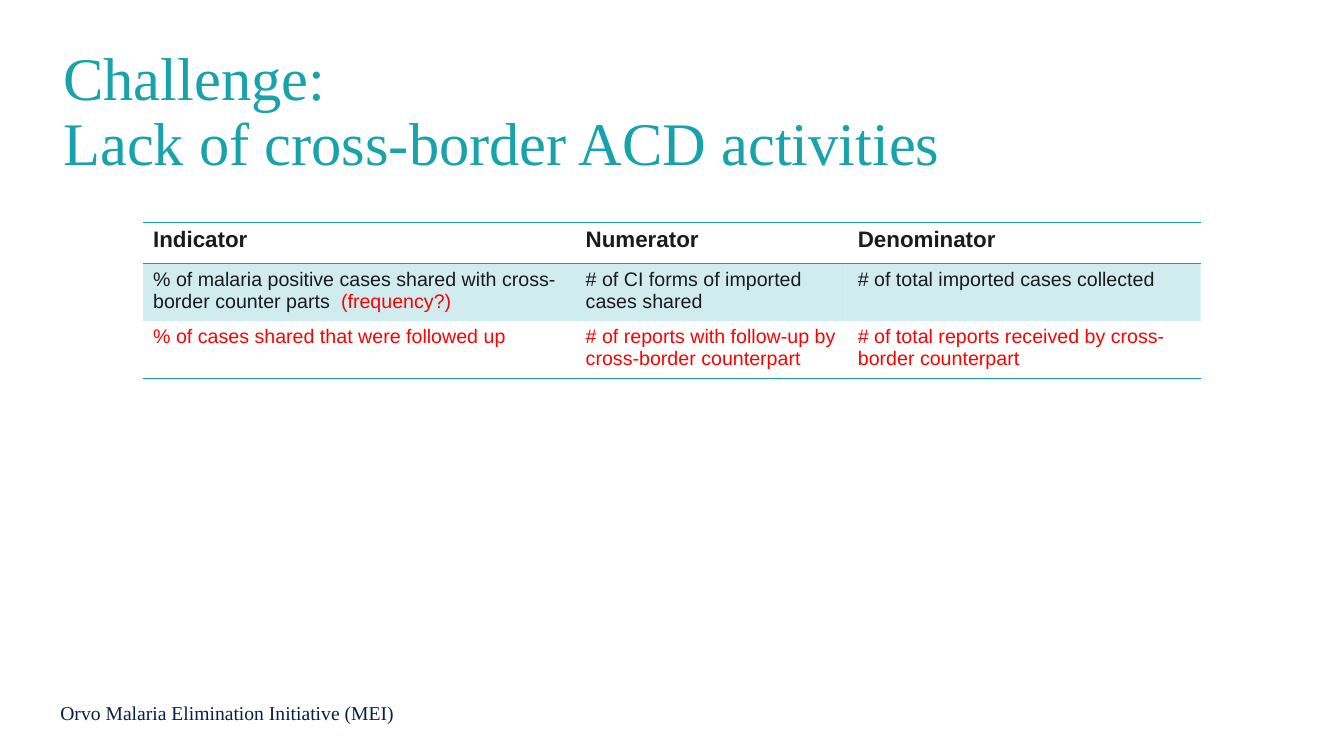
from pptx import Presentation
from pptx.dml.color import RGBColor
from pptx.enum import text
from pptx.oxml.ns import qn
from pptx.util import Pt
from lxml import etree

TEAL = RGBColor(0x18, 0xA3, 0xAC)
NAVY = RGBColor(0x05, 0x20, 0x49)
INK = RGBColor(0x1B, 0x1B, 0x1B)
RED = RGBColor(0xFF, 0x00, 0x00)
SERIF, SANS = "Times New Roman", "Arial"

# Content: each indicator cell is a list of (wording, colour) runs
TITLE = ["Challenge:", "Lack of cross-border ACD activities"]
FOOTER = "Orvo Malaria Elimination Initiative (MEI)"
INDICATORS = [
    [[("Indicator", INK)], [("Numerator", INK)], [("Denominator", INK)]],
    [[("% of malaria positive cases shared with cross-border counter parts ", INK),
      (" (frequency?)", RED)],
     [("# of CI forms of imported cases shared", INK)],
     [("# of total imported cases collected", INK)]],
    [[("% of cases shared that were followed up", RED)],
     [("# of reports with follow-up by cross-border counterpart", RED)],
     [("# of total reports received by cross-border counterpart", RED)]],
]
COLUMN_WIDTHS = [309, 194.4, 252]
ROW_HEIGHTS = [29.5, 39, 39]
SHADED_ROW = 1
RULES = {0: ("T", "B"), 1: ("T",), 2: ("B",)}  # ruled edges of each row


def add_run(paragraph, wording, size, font, colour, bold=False):
    run = paragraph.add_run()
    run.text = wording
    run.font.size, run.font.name, run.font.bold = Pt(size), font, bold
    run.font.color.rgb = colour


def add_text(slide, left, top, width, height):
    frame = slide.shapes.add_textbox(Pt(left), Pt(top), Pt(width), Pt(height)).text_frame
    frame.word_wrap = True
    return frame


def set_borders(cell, ruled):
    properties = cell._tc.get_or_add_tcPr()
    for position, edge in enumerate("LRTB"):
        line = etree.Element(qn("a:ln" + edge), w=str(Pt(1)))
        if edge in ruled:
            fill = etree.SubElement(line, qn("a:solidFill"))
            etree.SubElement(fill, qn("a:srgbClr"), val=str(TEAL))
        else:
            etree.SubElement(line, qn("a:noFill"))
        properties.insert(position, line)


def shade(cell, percent):
    cell.fill.solid()
    cell.fill.fore_color.rgb = TEAL
    colour = cell._tc.tcPr.find(".//" + qn("a:srgbClr"))
    etree.SubElement(colour, qn("a:alpha"), val=str(percent * 1000))


def add_indicators(slide):
    table = slide.shapes.add_table(
        len(ROW_HEIGHTS), len(COLUMN_WIDTHS), Pt(102.2), Pt(159),
        Pt(sum(COLUMN_WIDTHS)), Pt(sum(ROW_HEIGHTS))).table
    table.first_row = table.horz_banding = False
    for column, width in zip(table.columns, COLUMN_WIDTHS):
        column.width = Pt(width)
    for r, (row, height) in enumerate(zip(table.rows, ROW_HEIGHTS)):
        row.height = Pt(height)
        header = r == 0
        for cell, runs in zip(row.cells, INDICATORS[r]):
            for wording, colour in runs:
                add_run(cell.text_frame.paragraphs[0], wording,
                        16 if header else 14, SANS, colour, header)
            if r == SHADED_ROW:
                shade(cell, 20)
            else:
                cell.fill.background()
            set_borders(cell, RULES[r])


def main():
    deck = Presentation()
    deck.slide_width, deck.slide_height = Pt(960), Pt(540)
    slide = deck.slides.add_slide(deck.slide_layouts[6])

    # Footer
    footer = add_text(slide, 36, 496.8, 382.3, 24.5)
    add_run(footer.paragraphs[0], FOOTER, 14, SERIF, NAVY)

    # Title
    title = add_text(slide, 38.2, 28.8, 896.4, 104.4)
    title.vertical_anchor = text.MSO_ANCHOR.MIDDLE
    heading = title.paragraphs[0]
    heading.line_spacing = 0.9
    for i, line in enumerate(TITLE):
        if i:
            heading.add_line_break()
        add_run(heading, line, 43.2, SERIF, TEAL)

    # Indicator table
    add_indicators(slide)
    deck.save("out.pptx")


if __name__ == "__main__":
    main()
